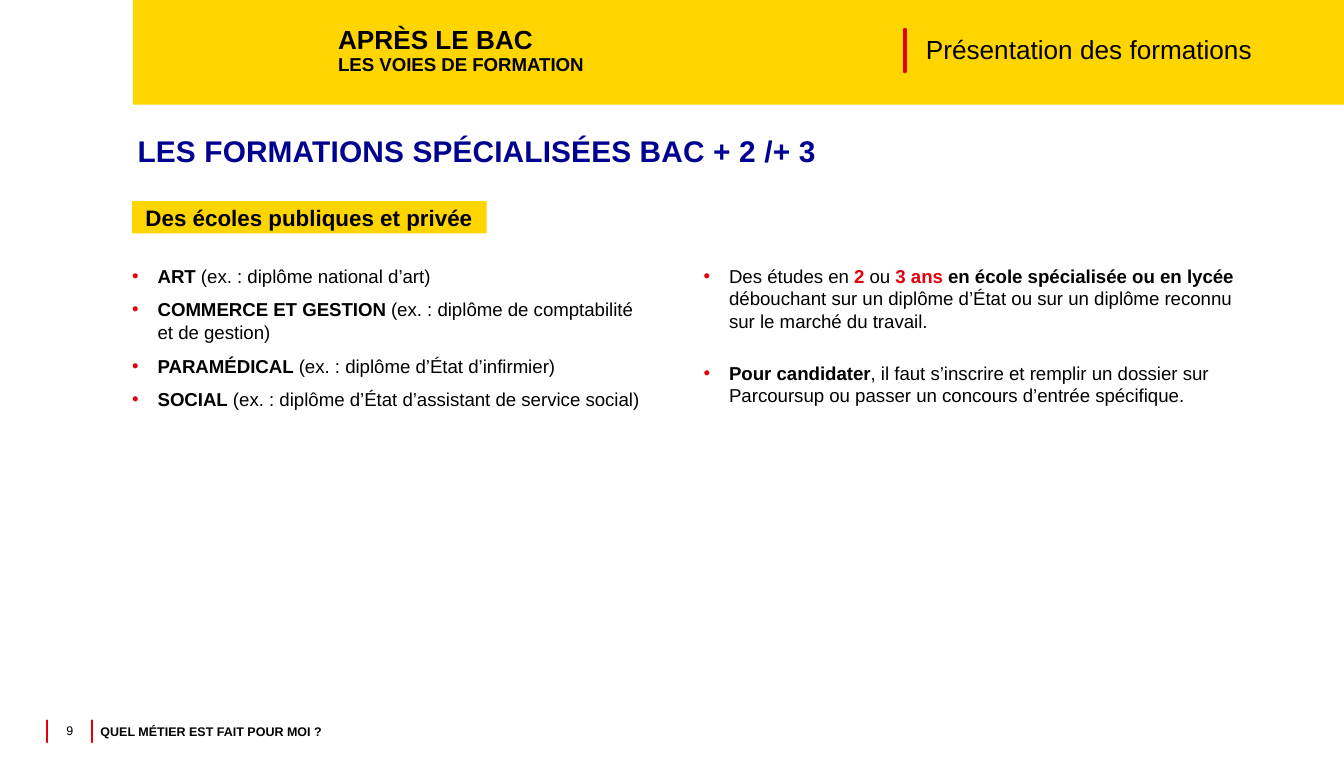
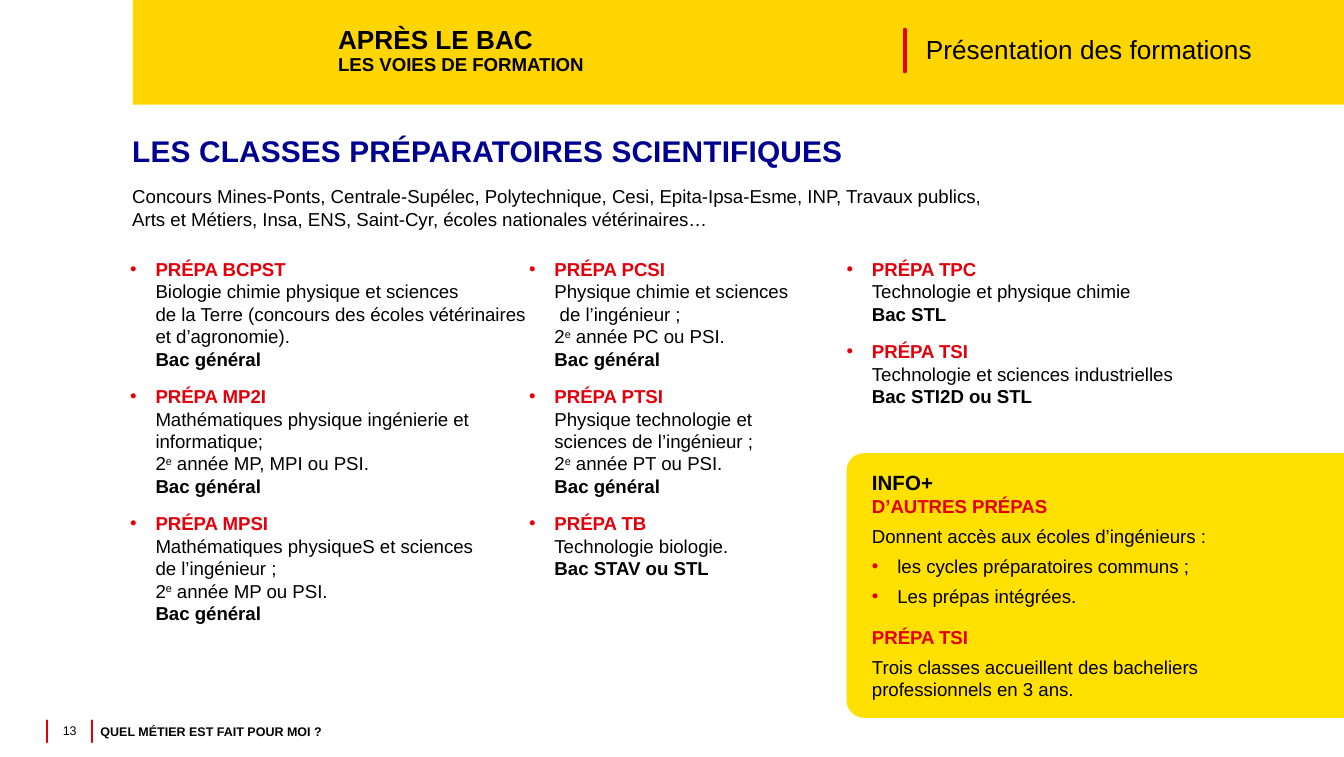
from collections import namedtuple
import math

from lxml import etree
from pptx import Presentation
from pptx import util as u
from pptx.dml.color import RGBColor
from pptx.enum import shapes, text
from pptx.oxml import ns

YELLOW = RGBColor(0xFF, 0xD5, 0x00)
CARD_YELLOW = RGBColor(0xFF, 0xE0, 0x00)
RED = RGBColor(0xE3, 0x00, 0x0B)
BLUE = RGBColor(0x00, 0x00, 0x91)
BLACK = RGBColor(0x00, 0x00, 0x00)

FONT = "Arial"
BODY_SIZE = 10
FOOTER_SIZE = 6.75
BULLET_INDENT = 0.48

# Run styles
STRONG, ACCENT, SUPERSCRIPT, SMALL = "strong", "accent", "superscript", "small"

# Lengths in centimetres
Box = namedtuple("Box", "left top width height")
PAGE = Box(0, 0, 25.4, 14.3)
BAND = Box(2.51, 0, 22.89, 1.98)
FOOTER = Box(0.89, 13.44, 10, 0.76)
HEADING = Box(2.5, 2.5, 21, 0.79)


def cm_box(box):
    return [u.Cm(length) for length in box]


# Basic parts

def add_bullet(paragraph):
    properties = paragraph._p.get_or_add_pPr()
    indent = u.Cm(BULLET_INDENT)
    properties.set("marL", str(indent))
    properties.set("indent", str(-indent))
    colour = etree.SubElement(properties, ns.qn("a:buClr"))
    etree.SubElement(colour, ns.qn("a:srgbClr"), val=str(RED))
    etree.SubElement(properties, ns.qn("a:buFont"), typeface=FONT)
    etree.SubElement(properties, ns.qn("a:buChar"), char="•")


def style_run(run, style):
    if style in (STRONG, ACCENT):
        run.font.bold = True
    if style == ACCENT:
        run.font.color.rgb = RED
    elif style == SUPERSCRIPT:
        run._r.get_or_add_rPr().set("baseline", "30000")
    elif style == SMALL:
        run.font.size = u.Pt(BODY_SIZE)


def write_paragraph(paragraph, runs, size=BODY_SIZE, colour=BLACK, bold=False,
                    bullet=False, before=0, after=0, line=None,
                    align=text.PP_ALIGN.LEFT, tracking=None):
    """Runs are plain strings or (string, style) pairs."""
    if bullet:
        add_bullet(paragraph)
    paragraph.alignment = align
    paragraph.space_before = u.Pt(before)
    paragraph.space_after = u.Pt(after)
    if line:
        paragraph.line_spacing = line
    font = paragraph.font
    font.name, font.size, font.bold = FONT, u.Pt(size), bold
    font.color.rgb = colour
    for item in [runs] if isinstance(runs, str) else runs:
        content, style = (item, None) if isinstance(item, str) else item
        for number, part in enumerate(content.split("\n")):
            if number:
                paragraph.add_line_break()
            if part:
                run = paragraph.add_run()
                run.text = part
                style_run(run, style)
                if tracking:
                    run._r.get_or_add_rPr().set("spc", str(tracking))


def set_frame(shape, middle=False, inset=0):
    frame = shape.text_frame
    frame.word_wrap = True
    frame.vertical_anchor = text.MSO_ANCHOR.MIDDLE if middle else text.MSO_ANCHOR.TOP
    frame.margin_left = frame.margin_right = u.Cm(inset)
    frame.margin_top = frame.margin_bottom = u.Cm(inset)
    return frame


def add_text(slide, box, paragraphs, middle=False, inset=0, **common):
    """Each paragraph is (runs, options); options override the common ones."""
    frame = set_frame(slide.shapes.add_textbox(*cm_box(box)), middle, inset)
    for number, (runs, options) in enumerate(paragraphs):
        paragraph = frame.add_paragraph() if number else frame.paragraphs[0]
        settings = {**common, **options}
        if not number:
            settings["before"] = 0
        write_paragraph(paragraph, runs, **settings)


def fill_plain(shape, colour):
    shape.shadow.inherit = False
    shape.fill.solid()
    shape.fill.fore_color.rgb = colour
    shape.line.fill.background()


def add_rectangle(slide, box, colour):
    shape = slide.shapes.add_shape(shapes.MSO_SHAPE.RECTANGLE, *cm_box(box))
    fill_plain(shape, colour)
    return shape


def add_red_rule(slide, left, top, height, weight):
    rule = slide.shapes.add_connector(
        shapes.MSO_CONNECTOR.STRAIGHT,
        u.Cm(left), u.Cm(top), u.Cm(left), u.Cm(top + height))
    rule.line.color.rgb = RED
    rule.line.width = u.Pt(weight)
    rule.line._get_or_add_ln().set("cap", "rnd")
    etree.SubElement(rule._element.spPr, ns.qn("a:effectLst"))


# Shared regions

def draw_band(slide, box):
    add_rectangle(slide, box, YELLOW)
    chapter = ["APRÈS LE BAC\n", ("LES VOIES DE FORMATION", SMALL)]
    add_text(slide, Box(box.left + 3.88, box.top + 0.48, 6.3, 0.99),
             [(chapter, {})], middle=True, size=14, bold=True, line=0.9)
    add_red_rule(slide, box.left + 14.59, box.top + 0.56, 0.79, 2)
    add_text(slide, Box(box.left + 14.99, box.top + 0.58, 6.6, 0.76),
             [("Présentation des formations", {})], middle=True, size=14, line=0.9)


def draw_footer(slide, box, number):
    for offset in (0, 0.85):
        add_red_rule(slide, box.left + offset, box.top + 0.17, 0.41, 1.25)
    add_text(slide, Box(box.left + 0.1, box.top, 0.66, box.height),
             [(str(number), {})], middle=True, inset=0.1, size=FOOTER_SIZE, line=0.9,
             align=text.PP_ALIGN.CENTER)
    add_text(slide, Box(box.left + 0.91, box.top, 8.94, box.height),
             [("QUEL MÉTIER EST FAIT POUR MOI ?", {})],
             middle=True, inset=0.1, size=FOOTER_SIZE, bold=True)


def start_slide(presentation, number, heading, heading_inset=0):
    slide = presentation.slides.add_slide(presentation.slide_layouts[6])
    draw_band(slide, BAND)
    draw_footer(slide, FOOTER, number)
    add_text(slide, HEADING, [(heading, {})], middle=True, inset=heading_inset,
             size=16, colour=BLUE, bold=True, line=0.9, after=6, tracking=10)
    return slide


# Specialised courses

def draw_label(slide, box, caption):
    add_rectangle(slide, box, YELLOW)
    add_text(slide, Box(box.left + 0.25, box.top, box.width, box.height),
             [(caption, {})], middle=True, size=12, bold=True, after=8)


def build_specialised_courses(presentation):
    slide = start_slide(presentation, 9, "LES FORMATIONS SPÉCIALISÉES BAC + 2 /+ 3", 0.1)
    draw_label(slide, Box(2.5, 3.8, 6.7, 0.61), "Des écoles publiques et privée")

    fields = [
        ("ART", "diplôme national d’art"),
        ("COMMERCE ET GESTION", "diplôme de comptabilité\net de gestion"),
        ("PARAMÉDICAL", "diplôme d’État d’infirmier"),
        ("SOCIAL", "diplôme d’État d’assistant de service social"),
    ]
    add_text(slide, Box(2.5, 5, 10.21, 2.77),
             [([(field, STRONG), f" (ex. : {example})"], {}) for field, example in fields],
             bullet=True, before=6)

    studies = [
        "Des études en ", ("2", ACCENT), " ou ", ("3 ans ", ACCENT),
        ("en école spécialisée ou en lycée ", STRONG),
        "débouchant sur un diplôme d’État ou sur un diplôme reconnu "
        "sur le marché du travail.",
    ]
    application = [
        ("Pour candidater", STRONG),
        ", il faut s’inscrire et remplir un dossier sur Parcoursup "
        "ou passer un concours d’entrée spécifique.",
    ]
    add_text(slide, Box(13.3, 5, 10.21, 3.48), [(studies, {}), (application, {})],
             bullet=True, before=12, after=4)


# Preparatory classes

PREPA_COLUMNS = [
    (2.46, [
        ("BCPST", "Biologie chimie physique et sciences\nde la Terre (concours des "
         "écoles vétérinaires et d’agronomie).", None, "général"),
        ("MP2I", "Mathématiques physique ingénierie et informatique;",
         "MP, MPI ou PSI", "général"),
        ("MPSI", "Mathématiques physiqueS et sciences\nde l’ingénieur ;",
         "MP ou PSI", "général"),
    ]),
    (10, [
        ("PCSI", "Physique chimie et sciences\n de l’ingénieur ;", "PC ou PSI", "général"),
        ("PTSI", "Physique technologie et\nsciences de l’ingénieur ;",
         "PT ou PSI", "général"),
        ("TB", "Technologie biologie.", None, "STAV ou STL"),
    ]),
    (16, [
        ("TPC", "Technologie et physique chimie", None, "STL"),
        ("TSI", "Technologie et sciences industrielles", None, "STI2D ou STL"),
    ]),
]


def draw_prepa_column(slide, box, prepas):
    paragraphs = []
    for name, subjects, second_year, bac in prepas:
        runs = [(f"PRÉPA {name}\n", ACCENT), subjects + "\n"]
        if second_year:
            runs += ["2", ("e", SUPERSCRIPT), f" année {second_year}.\n"]
        paragraphs.append((runs + [(f"Bac {bac}", STRONG)], {}))
    add_text(slide, box, paragraphs, bullet=True, before=4, after=4)


def draw_info_card(slide, box, radius=0.33, steps=6):
    # Rounded on the left, square on the right edge of the page
    right, bottom = box.left + box.width, box.top + box.height
    points = [(right, bottom), (right, box.top)]
    for centre_y, start in ((box.top + radius, 90), (bottom - radius, 180)):
        for step in range(steps + 1):
            angle = math.radians(start + 90 * step / steps)
            points.append((box.left + radius + radius * math.cos(angle),
                           centre_y - radius * math.sin(angle)))
    outline = [(u.Cm(x), u.Cm(y)) for x, y in points]
    builder = slide.shapes.build_freeform(*outline[0])
    builder.add_line_segments(outline[1:], close=True)
    fill_plain(builder.convert_to_shape(), CARD_YELLOW)

    red_title = {"colour": RED, "bold": True}
    add_text(slide, Box(box.left + 0.48, box.top, box.width - 0.48, box.height), [
        ("INFO+", {"size": 11, "bold": True, "after": 0}),
        ("D’AUTRES PRÉPAS", red_title),
        ("Donnent accès aux écoles d’ingénieurs :", {}),
        ("les cycles préparatoires communs ;", {"bullet": True}),
        ("Les prépas intégrées.", {"bullet": True}),
        ("PRÉPA TSI", {**red_title, "before": 6}),
        ("Trois classes accueillent des bacheliers\nprofessionnels en 3 ans.", {}),
    ], middle=True, after=4)


def build_preparatory_classes(presentation):
    slide = start_slide(presentation, 13, "LES CLASSES PRÉPARATOIRES SCIENTIFIQUES")
    contests = ("Concours Mines-Ponts, Centrale-Supélec, Polytechnique, Cesi, "
                "Epita-Ipsa-Esme, INP, Travaux publics,\n"
                "Arts et Métiers, Insa, ENS, Saint-Cyr, écoles nationales vétérinaires…")
    add_text(slide, Box(2.5, 3.5, 20.9, 0.86), [(contests, {})], after=4)
    for left, prepas in PREPA_COLUMNS:
        draw_prepa_column(slide, Box(left, 4.87, 7.5, 2.8 * len(prepas) - 1.3), prepas)
    draw_info_card(slide, Box(16, 8.56, 9.4, 5))


def main():
    presentation = Presentation()
    presentation.slide_width = u.Cm(PAGE.width)
    presentation.slide_height = u.Cm(PAGE.height)
    build_specialised_courses(presentation)
    build_preparatory_classes(presentation)
    presentation.save("out.pptx")


if __name__ == "__main__":
    main()
